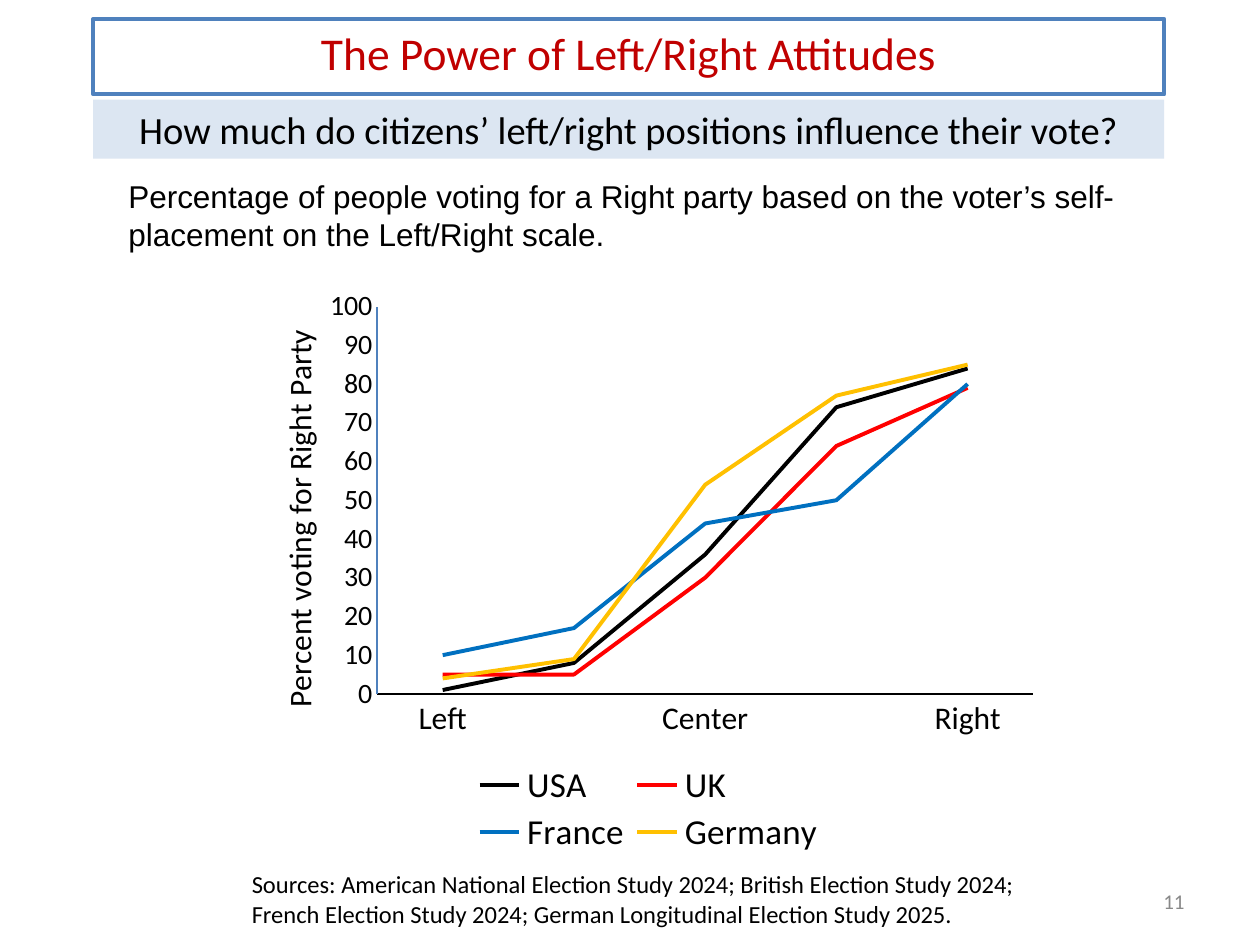
from typing import NamedTuple

from lxml import etree
from pptx import Presentation
from pptx.chart.data import CategoryChartData
from pptx.dml.color import RGBColor
from pptx.enum.chart import XL_CHART_TYPE, XL_LEGEND_POSITION, XL_MARKER_STYLE, XL_TICK_MARK
from pptx.enum.shapes import MSO_SHAPE
from pptx.enum.text import MSO_ANCHOR, PP_ALIGN
from pptx.oxml.ns import qn
from pptx.util import Inches, Pt

LINE_CHART = XL_CHART_TYPE.LINE
LEGEND_BOTTOM = XL_LEGEND_POSITION.BOTTOM
NO_MARKER = XL_MARKER_STYLE.NONE
NO_TICK = XL_TICK_MARK.NONE
RECTANGLE = MSO_SHAPE.RECTANGLE
TOP, MIDDLE = MSO_ANCHOR.TOP, MSO_ANCHOR.MIDDLE
LEFT, CENTER, RIGHT = PP_ALIGN.LEFT, PP_ALIGN.CENTER, PP_ALIGN.RIGHT

BLACK, BLUE = "000000", "4F81BD"


class Box(NamedTuple):
    left: float
    top: float
    width: float
    height: float

    def lengths(self) -> list:
        return [Inches(value) for value in self]


class Country(NamedTuple):
    name: str
    color: str
    votes: tuple[int, ...]


CATEGORIES = ("Left", "", "Center", "", "Right")
COUNTRIES = (
    Country("USA", BLACK, (1, 8, 36, 74, 84)),
    Country("UK", "FF0000", (5, 5, 30, 64, 79)),
    Country("France", "0070C0", (10, 17, 44, 50, 80)),
    Country("Germany", "FFC000", (4, 9, 54, 77, 85)),
)


def rgb(color: str) -> RGBColor:
    return RGBColor.from_string(color)


def set_font(font, size: float, color: str = BLACK, name: str = "Calibri") -> None:
    font.size, font.name, font.bold = Pt(size), name, False
    font.color.rgb = rgb(color)


def set_line(line, color: str, width: float) -> None:
    line.color.rgb = rgb(color)
    line.width = Pt(width)


def write(shape, *lines: str, size: float, color: str = BLACK, name: str = "Calibri",
          align=LEFT, anchor=TOP) -> None:
    """Fill a shape with one paragraph per line."""
    frame = shape.text_frame
    frame.word_wrap = True
    frame.vertical_anchor = anchor
    frame.text = "\n".join(lines)
    for paragraph in frame.paragraphs:
        paragraph.alignment = align
        set_font(paragraph.runs[0].font, size, color, name)


def add_text(slide, box: Box, *lines: str, **text_format) -> None:
    write(slide.shapes.add_textbox(*box.lengths()), *lines, **text_format)


def add_title(slide, box: Box, text: str) -> None:
    title = slide.shapes.title
    title.left, title.top, title.width, title.height = box.lengths()
    set_line(title.line, BLUE, 2.25)
    write(title, text, size=26, color="C00000", align=CENTER, anchor=TOP)


def add_banner(slide, box: Box, text: str) -> None:
    banner = slide.shapes.add_shape(RECTANGLE, *box.lengths())
    banner.shadow.inherit = False
    banner.fill.solid()
    banner.fill.fore_color.rgb = rgb("DCE6F2")
    banner.line.fill.background()
    write(banner, text, size=22, align=CENTER)


def set_layout(parent, index: int, **fractions: float) -> None:
    """Place a chart part by fractions of the chart's size."""
    for old in parent.findall(qn("c:layout")):
        parent.remove(old)
    layout = etree.Element(qn("c:layout"))
    manual = etree.SubElement(layout, qn("c:manualLayout"))
    if parent.tag == qn("c:plotArea"):
        etree.SubElement(manual, qn("c:layoutTarget")).set("val", "inner")
    for side in ("x", "y"):
        etree.SubElement(manual, qn(f"c:{side}Mode")).set("val", "edge")
    for side, value in fractions.items():
        etree.SubElement(manual, qn(f"c:{side}")).set("val", str(value))
    parent.insert(index, layout)


def format_axis(axis, size: float, color: str) -> None:
    axis.has_major_gridlines = False
    axis.major_tick_mark = axis.minor_tick_mark = NO_TICK
    set_font(axis.tick_labels.font, size)
    set_line(axis.format.line, color, 0.75)


def add_vote_chart(slide, box: Box) -> None:
    data = CategoryChartData(number_format="0")
    data.categories = CATEGORIES
    for country in COUNTRIES:
        data.add_series(country.name, country.votes)
    chart = slide.shapes.add_chart(LINE_CHART, *box.lengths(), data).chart
    chart.has_title = False
    set_font(chart.font, 10)

    plot = chart.plots[0]
    plot.vary_by_categories = False
    for series, country in zip(plot.series, COUNTRIES):
        series.smooth = False
        series.marker.style = NO_MARKER
        set_line(series.format.line, country.color, 2.25)

    format_axis(chart.category_axis, 18, BLACK)
    value_axis = chart.value_axis
    format_axis(value_axis, 16, BLUE)
    value_axis.minimum_scale, value_axis.maximum_scale = 0, 100
    value_axis.major_unit = 10
    title_frame = value_axis.axis_title.text_frame
    title_frame.text = "Percent voting for Right Party"
    set_font(title_frame.paragraphs[0].runs[0].font, 18)

    chart.has_legend = True
    chart.legend.position = LEGEND_BOTTOM
    chart.legend.include_in_layout = False
    set_font(chart.legend.font, 20)

    plot_area = chart.element.xpath(".//c:plotArea")[0]
    set_layout(plot_area, 0, x=0.17, y=0.05, w=0.81, h=0.66)
    set_layout(plot_area.find(f"{qn('c:valAx')}/{qn('c:title')}"), 1, x=0.04, y=0.08)
    set_layout(chart.element.xpath(".//c:legend")[0], 1, x=0.28, y=0.82, w=0.45, h=0.17)


def main() -> None:
    presentation = Presentation()
    presentation.slide_width, presentation.slide_height = Inches(10), Inches(7.5)
    slide = presentation.slides.add_slide(presentation.slide_layouts[5])

    add_title(slide, Box(0.74, 0.15, 8.5, 0.6), "The Power of Left/Right Attitudes")
    add_text(slide, Box(7.17, 6.95, 2.33, 0.4), "11",
             size=12, color="898989", align=RIGHT, anchor=MIDDLE)
    add_banner(slide, Box(0.74, 0.79, 8.5, 0.47),
               "How much do citizens’ left/right positions influence their vote?")
    add_text(slide, Box(0.92, 1.36, 8.17, 0.74),
             "Percentage of people voting for a Right party based on the voter’s "
             "self-placement on the Left/Right scale.", size=18, name="Arial")
    add_vote_chart(slide, Box(1.9, 2.2, 6.43, 4.66))
    add_text(slide, Box(1.9, 6.85, 6.67, 0.57),
             "Sources: American National Election Study 2024; British Election Study 2024;",
             "French Election Study 2024; German Longitudinal Election Study 2025.", size=14)
    presentation.save("out.pptx")


if __name__ == "__main__":
    main()
